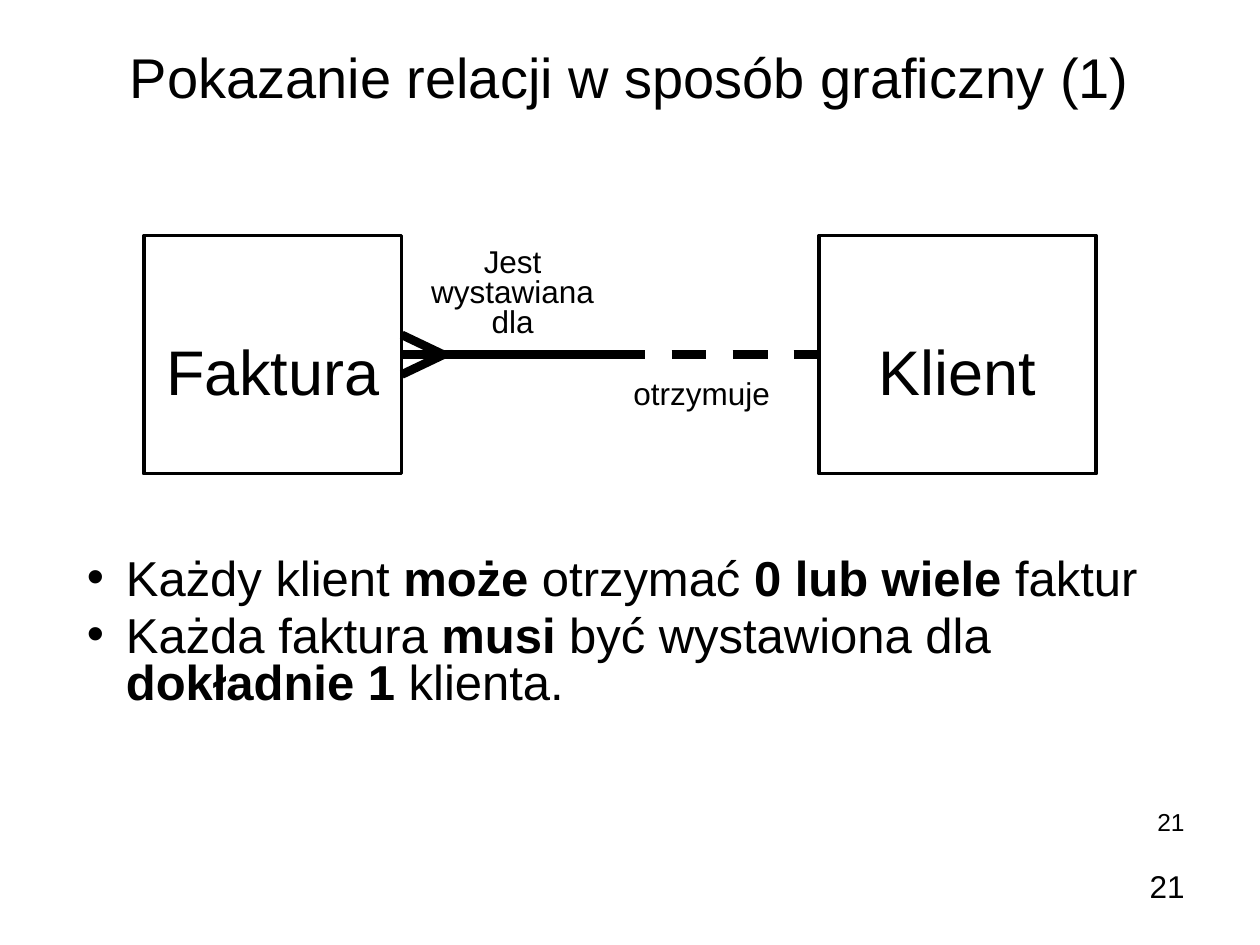
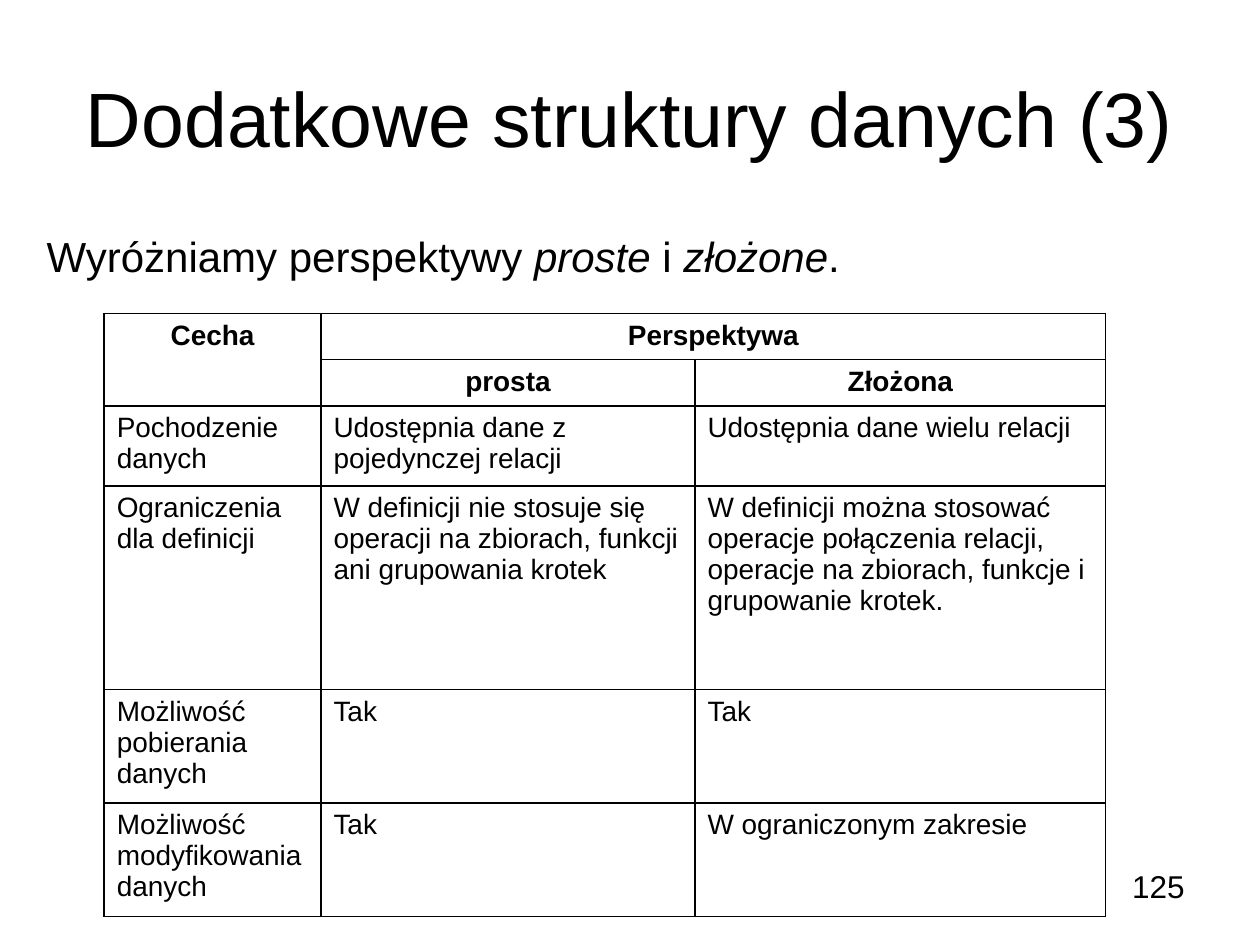
"""Builds two database lecture slides: a relationship diagram and a table of view types."""
import lxml.etree
import pptx
import pptx.dml.color
import pptx.enum.dml
import pptx.enum.shapes
import pptx.enum.text
import pptx.oxml.ns
import pptx.util

Cm = pptx.util.Cm
Pt = pptx.util.Pt
qn = pptx.oxml.ns.qn
ALIGN = pptx.enum.text.PP_ALIGN
ANCHOR = pptx.enum.text.MSO_ANCHOR

COLORS = {"ink": "000000", "paper": "FFFFFF"}
FONT = "Arial"
EMPHASIS = {"plain": {}, "bold": {"bold": True}, "italic": {"italic": True}}

RELATION_TITLE = "Pokazanie relacji w sposób graficzny (1)"
ENTITY_TOP, ENTITY_HEIGHT = 4.75, 4.8
ENTITIES = [("Faktura", 2.9, 5.2), ("Klient", 16.51, 5.59)]
ROLE_LABELS = [
    ("Jest wystawiana dla", (8.28, 4.9, 4.11, 2.11)),
    ("otrzymuje", (12.09, 7.57, 4.11, 0.86)),
]
RULES = [
    [("Każdy klient ", "plain"), ("może", "bold"), (" otrzymać ", "plain"),
     ("0 lub wiele", "bold"), (" faktur", "plain")],
    [("Każda faktura ", "plain"), ("musi", "bold"), (" być wystawiona dla ", "plain"),
     ("dokładnie 1", "bold"), (" klienta.", "plain")],
]

VIEWS_TITLE = "Dodatkowe struktury danych (3)"
VIEWS_INTRO = [("Wyróżniamy perspektywy ", "plain"), ("proste", "italic"), (" i ", "plain"),
               ("złożone", "italic"), (".", "plain")]
COLUMN_WIDTHS = [4.37, 7.54, 8.28]
ROW_HEIGHTS = [0.92, 0.92, 1.55, 4.11, 2.21, 2.21]
HEADER_ROWS = 2
MERGES = [((0, 0), (1, 0)), ((0, 1), (0, 2))]
VIEWS_TABLE = [
    ["Cecha", "Perspektywa", ""],
    ["", "prosta", "Złożona"],
    ["Pochodzenie danych", "Udostępnia dane z pojedynczej relacji",
     "Udostępnia dane wielu relacji"],
    ["Ograniczenia dla definicji",
     "W definicji nie stosuje się operacji na zbiorach, funkcji ani grupowania krotek",
     "W definicji można stosować operacje połączenia relacji, "
     "operacje na zbiorach, funkcje i grupowanie krotek."],
    ["Możliwość pobierania danych", "Tak", "Tak"],
    ["Możliwość modyfikowania danych", "Tak", "W ograniczonym zakresie"],
]


def apply_format(target, values):
    for name, value in values.items():
        setattr(target, name, value)


def color(name):
    return pptx.dml.color.RGBColor.from_string(COLORS[name])


def write_paragraph(paragraph, runs, size, **paragraph_format):
    apply_format(paragraph, paragraph_format)
    for text, emphasis in runs:
        run = paragraph.add_run()
        run.text = text
        apply_format(run.font, {"name": FONT, "size": Pt(size), **EMPHASIS[emphasis]})
        run.font.color.rgb = color("ink")


def add_text(slide, box, paragraphs, size, frame_format=None, **paragraph_format):
    frame = slide.shapes.add_textbox(*map(Cm, box)).text_frame
    apply_format(frame, {"word_wrap": True, **(frame_format or {})})
    for index, runs in enumerate(paragraphs):
        paragraph = frame.paragraphs[0] if index == 0 else frame.add_paragraph()
        write_paragraph(paragraph, runs, size, **paragraph_format)
    return frame


def add_title(slide, text, size, height):
    add_text(slide, (1.27, 0.76, 22.86, height), [[(text, "plain")]], size,
             {"vertical_anchor": ANCHOR.MIDDLE}, alignment=ALIGN.CENTER)


def add_page_number(slide, number, size=18, top=17.35):
    add_text(slide, (18.21, top, 5.92, 1.32), [[(number, "plain")]], size,
             alignment=ALIGN.RIGHT)


def add_entity(slide, name, left, width):
    shape = slide.shapes.add_shape(pptx.enum.shapes.MSO_SHAPE.RECTANGLE,
                                   *map(Cm, (left, ENTITY_TOP, width, ENTITY_HEIGHT)))
    shape.shadow.inherit = False
    shape.fill.solid()
    shape.fill.fore_color.rgb = color("paper")
    shape.line.color.rgb = color("ink")
    shape.line.width = Pt(2)
    apply_format(shape.text_frame, {"vertical_anchor": ANCHOR.TOP, "margin_top": Cm(1.96),
                                    "word_wrap": True})
    write_paragraph(shape.text_frame.paragraphs[0], [(name, "plain")], 36,
                    alignment=ALIGN.CENTER)


def add_line(slide, start, end, dash=None):
    connector = slide.shapes.add_connector(pptx.enum.shapes.MSO_CONNECTOR.STRAIGHT,
                                           *map(Cm, (*start, *end)))
    connector.line.color.rgb = color("ink")
    apply_format(connector.line, {"width": Pt(5), "dash_style": dash})
    lxml.etree.SubElement(connector.element.spPr, qn("a:effectLst"))


def add_bullet(paragraph, indent):
    properties = paragraph._p.get_or_add_pPr()
    properties.set("marL", str(Cm(indent)))
    properties.set("indent", str(-Cm(indent)))
    lxml.etree.SubElement(properties, qn("a:buFont")).set("typeface", FONT)
    lxml.etree.SubElement(properties, qn("a:buChar")).set("char", "•")


def add_borders(cell):
    properties = cell._tc.get_or_add_tcPr()
    for side in ("lnL", "lnR", "lnT", "lnB"):
        border = lxml.etree.SubElement(properties, qn(f"a:{side}"))
        border.set("w", str(Pt(1)))
        fill = lxml.etree.SubElement(border, qn("a:solidFill"))
        lxml.etree.SubElement(fill, qn("a:srgbClr")).set("val", COLORS["ink"])


def build_relation_slide(slide):
    add_title(slide, RELATION_TITLE, 32, 1.55)
    add_page_number(slide, "21")
    add_page_number(slide, "21", 14, 16.15)
    for entity in ENTITIES:
        add_entity(slide, *entity)
    frame = add_text(slide, (1.5, 11.15, 22.6, 3.38), RULES, 28,
                     line_spacing=0.8, space_before=Pt(5.6))
    for paragraph in frame.paragraphs:
        add_bullet(paragraph, 0.79)

    invoice_edge = ENTITIES[0][1] + ENTITIES[0][2]
    client_edge = ENTITIES[1][1]
    axis = ENTITY_TOP + ENTITY_HEIGHT / 2
    middle = (invoice_edge + client_edge) / 2
    add_line(slide, (invoice_edge, axis), (middle, axis))
    for offset in (-0.4, 0.4):
        add_line(slide, (invoice_edge, axis + offset), (invoice_edge + 0.84, axis))
    add_line(slide, (middle, axis), (client_edge, axis), pptx.enum.dml.MSO_LINE.DASH)
    for label, box in ROLE_LABELS:
        add_text(slide, box, [[(label, "plain")]], 18, alignment=ALIGN.CENTER,
                 line_spacing=0.8, space_before=Pt(3.6))


def build_views_slide(slide):
    add_page_number(slide, "125")
    add_title(slide, VIEWS_TITLE, 44, 3.18)
    add_text(slide, (0.69, 4.53, 16.56, 2.03), [VIEWS_INTRO], 24, {"word_wrap": False})

    table = slide.shapes.add_table(
        len(ROW_HEIGHTS), len(COLUMN_WIDTHS),
        *map(Cm, (2.1, 6.32, sum(COLUMN_WIDTHS), sum(ROW_HEIGHTS)))).table
    apply_format(table, {"first_row": False, "horz_banding": False})
    for column, width in zip(table.columns, COLUMN_WIDTHS):
        column.width = Cm(width)
    for row, height in zip(table.rows, ROW_HEIGHTS):
        row.height = Cm(height)
    for start, end in MERGES:
        table.cell(*start).merge(table.cell(*end))
    for row_index, texts in enumerate(VIEWS_TABLE):
        header = row_index < HEADER_ROWS
        for column_index, text in enumerate(texts):
            cell = table.cell(row_index, column_index)
            add_borders(cell)
            cell.fill.background()
            if text:
                write_paragraph(cell.text_frame.paragraphs[0],
                                [(text, "bold" if header else "plain")], 16,
                                alignment=ALIGN.CENTER if header else ALIGN.LEFT)


def main():
    presentation = pptx.Presentation()
    apply_format(presentation, {"slide_width": Cm(25.4), "slide_height": Cm(19.05)})
    for build in (build_relation_slide, build_views_slide):
        build(presentation.slides.add_slide(presentation.slide_layouts[6]))
    presentation.save("out.pptx")


if __name__ == "__main__":
    main()
